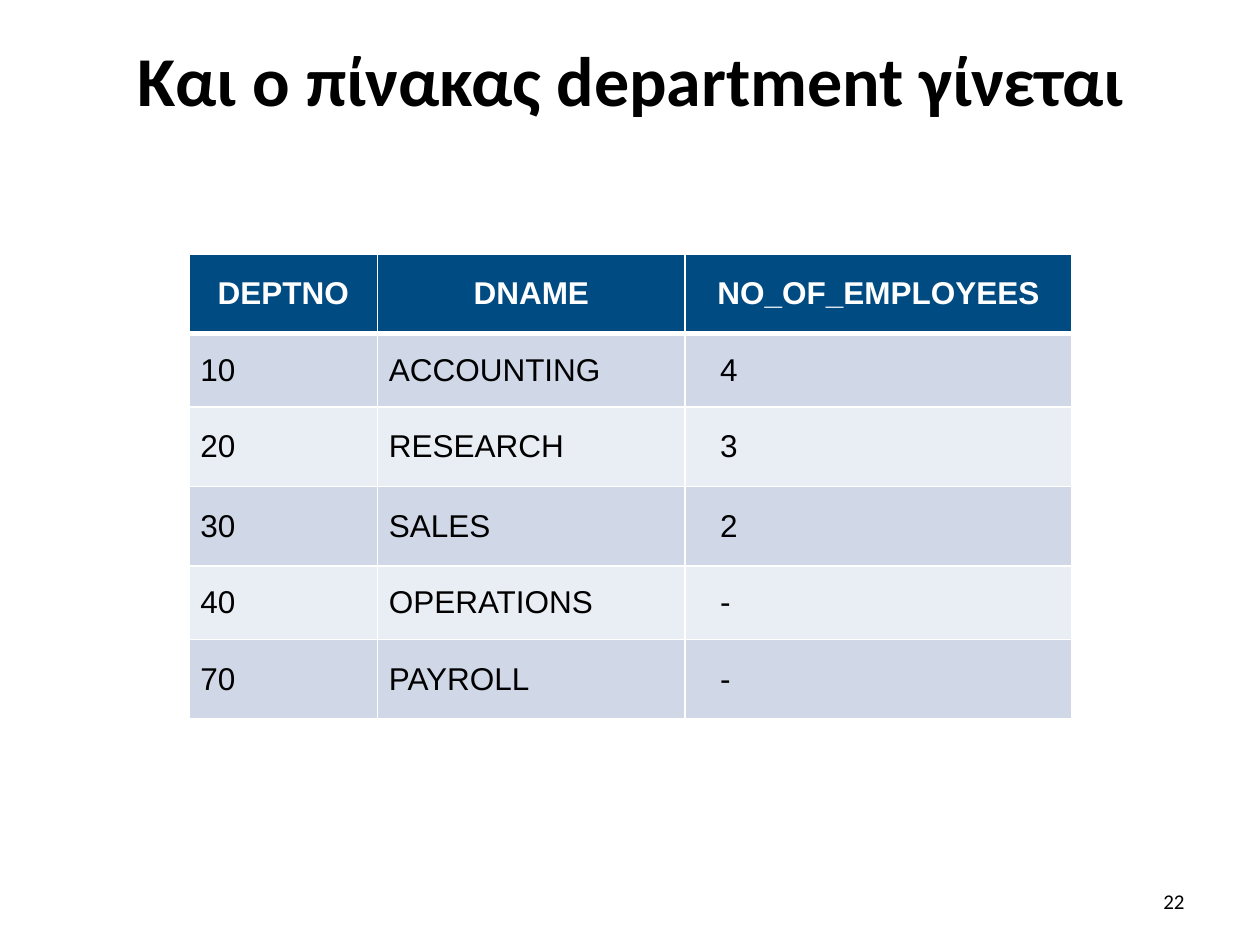
from lxml import etree
from pptx import Presentation
from pptx.dml.color import RGBColor
from pptx.enum import text
from pptx.oxml import ns
from pptx.util import Pt

theme = {
    "ink": RGBColor.from_string("000000"),
    "white": RGBColor.from_string("FFFFFF"),
    "header": RGBColor.from_string("004B82"),
    "bands": [RGBColor.from_string("D0D8E8"), RGBColor.from_string("E9EDF4")],
    "heading_font": "Calibri",
    "table_font": "Arial",
    "title_size": Pt(40),
    "table_size": Pt(18),
    "number_size": Pt(12),
}


def write(frame, words, alignment, color, **font_format):
    frame.vertical_anchor = text.MSO_ANCHOR.MIDDLE
    paragraph = frame.paragraphs[0]
    paragraph.alignment = alignment
    run = paragraph.add_run()
    run.text = words
    run.font.color.rgb = color
    for name, value in font_format.items():
        setattr(run.font, name, value)


def add_border(cell, side, width):
    properties = cell._tc.get_or_add_tcPr()
    line = etree.SubElement(properties, ns.qn(f"a:ln{side}"), w=str(Pt(width)))
    fill = etree.SubElement(line, ns.qn("a:solidFill"))
    etree.SubElement(fill, ns.qn("a:srgbClr"), val=str(theme["white"]))


presentation = Presentation()
presentation.slide_width, presentation.slide_height = Pt(720), Pt(540)
slide = presentation.slides.add_slide(presentation.slide_layouts[5])

title = slide.shapes.title
title_format = {"left": Pt(36.5), "top": Pt(9.5), "width": Pt(648), "height": Pt(71)}
for name, value in title_format.items():
    setattr(title, name, value)
write(title.text_frame, "Και ο πίνακας department γίνεται", text.PP_ALIGN.CENTER,
      theme["ink"], name=theme["heading_font"], size=theme["title_size"], bold=True)

departments = [
    ("DEPTNO", "DNAME", "NO_OF_EMPLOYEES"),
    ("10", "ACCOUNTING", "4"),
    ("20", "RESEARCH", "3"),
    ("30", "SALES", "2"),
    ("40", "OPERATIONS", "-"),
    ("70", "PAYROLL", "-"),
]
column_widths = [107.75, 175.75, 221]
row_heights = [45, 42, 45.5, 45.5, 42, 45.5]
table = slide.shapes.add_table(
    len(departments), len(column_widths), Pt(108), Pt(145.5),
    Pt(sum(column_widths)), Pt(sum(row_heights))).table
for column, width in zip(table.columns, column_widths):
    column.width = Pt(width)
for row, height in zip(table.rows, row_heights):
    row.height = Pt(height)

for row_index, values in enumerate(departments):
    is_header = row_index == 0
    for column_index, value in enumerate(values):
        cell = table.cell(row_index, column_index)
        is_count = column_index == 2
        count_indent = 0 if is_header else 20
        side_margin, edge_margin = (0, 0) if is_count else (6.5, 2.2)
        cell_format = {
            "margin_left": Pt(count_indent if is_count else side_margin),
            "margin_right": Pt(side_margin),
            "margin_top": Pt(edge_margin),
            "margin_bottom": Pt(edge_margin),
            "vertical_anchor": text.MSO_ANCHOR.MIDDLE,
        }
        for name, setting in cell_format.items():
            setattr(cell, name, setting)
        for side in "LRTB":
            under_header = (row_index, side) in [(0, "B"), (1, "T")]
            add_border(cell, side, 3 if under_header else 1)
        cell.fill.solid()
        cell.fill.fore_color.rgb = (
            theme["header"] if is_header else theme["bands"][(row_index - 1) % 2])
        write(cell.text_frame, value,
              text.PP_ALIGN.CENTER if is_header else text.PP_ALIGN.LEFT,
              theme["white"] if is_header else theme["ink"],
              name=theme["table_font"], size=theme["table_size"], bold=is_header)

slide_number = slide.shapes.add_textbox(Pt(516), Pt(500.5), Pt(168), Pt(28.75))
slide_number.text_frame.word_wrap = True
write(slide_number.text_frame, "22", text.PP_ALIGN.RIGHT, theme["ink"],
      name=theme["heading_font"], size=theme["number_size"])

presentation.save("out.pptx")
